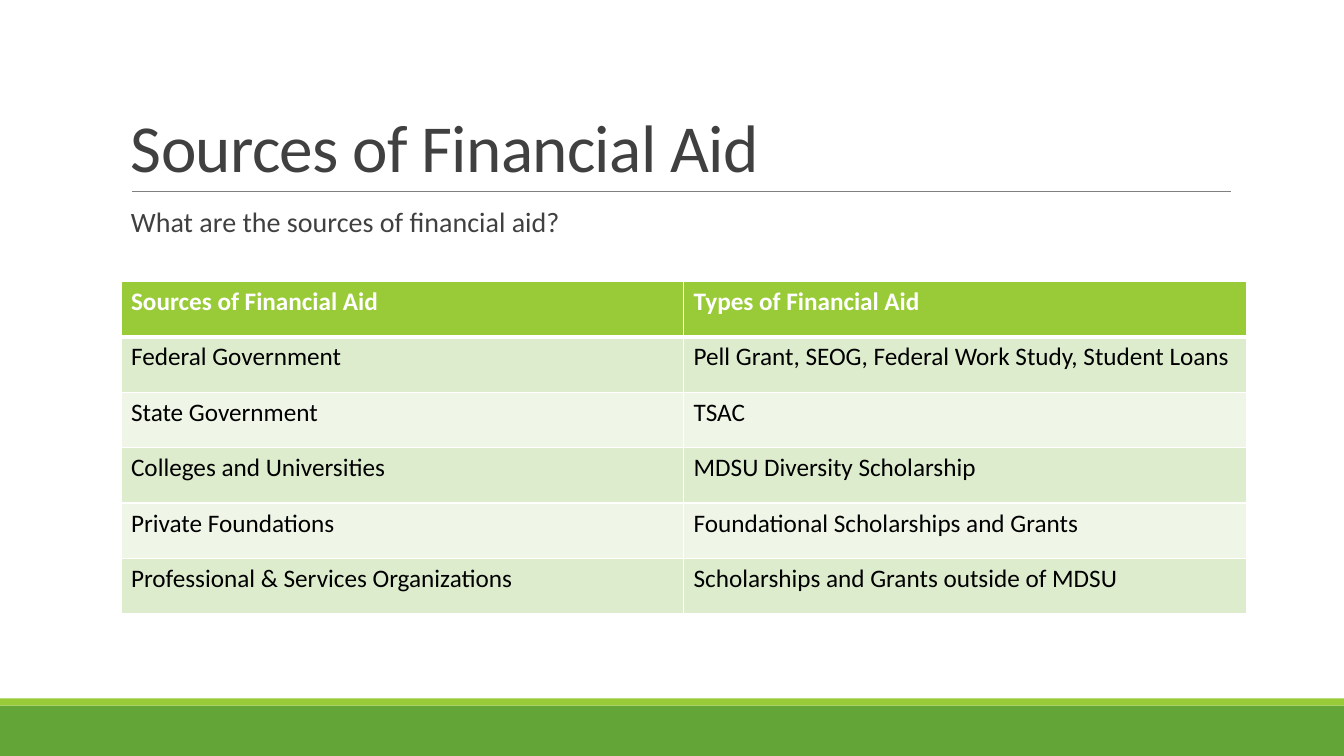
from lxml.etree import SubElement
from pptx import Presentation
from pptx.dml.color import RGBColor
from pptx.enum.shapes import MSO_CONNECTOR as Connector, MSO_SHAPE as Shape
from pptx.enum.text import MSO_ANCHOR as Anchor
from pptx.oxml.ns import qn
from pptx.util import Inches, Pt

GREEN, LIME, WHITE, BLACK = "63A537", "99CB38", "FFFFFF", "000000"
DARK_GRAY, RULE_GRAY = "404040", "808080"
BANDS = ["DEECCE", "EFF6E8"]

AID_ROWS = [
    ("Sources of Financial Aid", "Types of Financial Aid"),
    ("Federal Government", "Pell Grant, SEOG, Federal Work Study, Student Loans"),
    ("State Government", "TSAC"),
    ("Colleges and Universities", "MDSU Diversity Scholarship"),
    ("Private Foundations", "Foundational Scholarships and Grants"),
    ("Professional & Services Organizations", "Scholarships and Grants outside of MDSU"),
]


def rgb(value):
    return RGBColor.from_string(value)


def write(frame, text, size=18, color=BLACK, bold=False, line_spacing=1.0, tracking=None):
    """Set one formatted paragraph; tracking is in points."""
    paragraph = frame.paragraphs[0]
    paragraph.line_spacing = line_spacing
    run = paragraph.add_run()
    run.text = text
    run.font.name = "Calibri"
    run.font.size = Pt(size)
    run.font.bold = bold
    run.font.color.rgb = rgb(color)
    if tracking is not None:
        run.font._element.set("spc", str(int(tracking * 100)))


def set_borders(cell, color, **widths):
    """Draw cell borders; widths are points keyed by L, R, T and B."""
    properties = cell._tc.get_or_add_tcPr()
    for position, (side, width) in enumerate(widths.items()):
        line = properties.makeelement(qn(f"a:ln{side}"), w=str(Pt(width)))
        fill = SubElement(line, qn("a:solidFill"))
        SubElement(fill, qn("a:srgbClr"), val=color)
        properties.insert(position, line)


class SlideBuilder:
    def __init__(self, slide):
        self.shapes = slide.shapes

    def bar(self, left, top, width, height, color):
        shape = self.shapes.add_shape(
            Shape.RECTANGLE, Inches(left), Inches(top), Inches(width), Inches(height))
        shape.shadow.inherit = False
        shape.fill.solid()
        shape.fill.fore_color.rgb = rgb(color)
        shape.line.fill.background()

    def rule(self, left, right, top, color, width):
        line = self.shapes.add_connector(
            Connector.STRAIGHT, Inches(left), Inches(top), Inches(right), Inches(top))
        line.line.color.rgb = rgb(color)
        line.line.width = Pt(width)
        SubElement(line._element.spPr, qn("a:effectLst"))

    def text(self, left, top, width, height, text, anchor=Anchor.TOP, **style):
        box = self.shapes.add_textbox(
            Inches(left), Inches(top), Inches(width), Inches(height))
        frame = box.text_frame
        frame.word_wrap = True
        frame.vertical_anchor = anchor
        write(frame, text, **style)

    def table(self, left, top, width, height, rows):
        table = self.shapes.add_table(
            len(rows), len(rows[0]), Inches(left), Inches(top),
            Inches(width), Inches(height)).table
        for row_index, values in enumerate(rows):
            header = row_index == 0
            fill = LIME if header else BANDS[(row_index - 1) % 2]
            for column_index, value in enumerate(values):
                cell = table.cell(row_index, column_index)
                cell.fill.solid()
                cell.fill.fore_color.rgb = rgb(fill)
                write(cell.text_frame, value, color=WHITE if header else BLACK, bold=header)
                set_borders(cell, WHITE, L=1, R=1, T=3 if row_index == 1 else 1,
                            B=3 if header else 1)


def main():
    presentation = Presentation()
    presentation.slide_width = Inches(13.33)
    presentation.slide_height = Inches(7.5)
    builder = SlideBuilder(presentation.slides.add_slide(presentation.slide_layouts[6]))

    builder.bar(0, 7, 13.33, 0.5, GREEN)
    builder.bar(0, 6.93, 13.33, 0.07, LIME)
    builder.rule(1.31, 12.21, 1.9, RULE_GRAY, 0.5)
    builder.text(1.2, 0.31, 11, 1.59, "Sources of Financial Aid", anchor=Anchor.BOTTOM,
                 size=48, color=DARK_GRAY, line_spacing=0.85, tracking=-0.5)
    builder.text(1.2, 2.02, 11, 0.65, "What are the sources of financial aid?",
                 size=20, color=DARK_GRAY, line_spacing=0.9)
    builder.table(1.2, 2.79, 11.16, 3.3, AID_ROWS)
    presentation.save("out.pptx")


if __name__ == "__main__":
    main()
